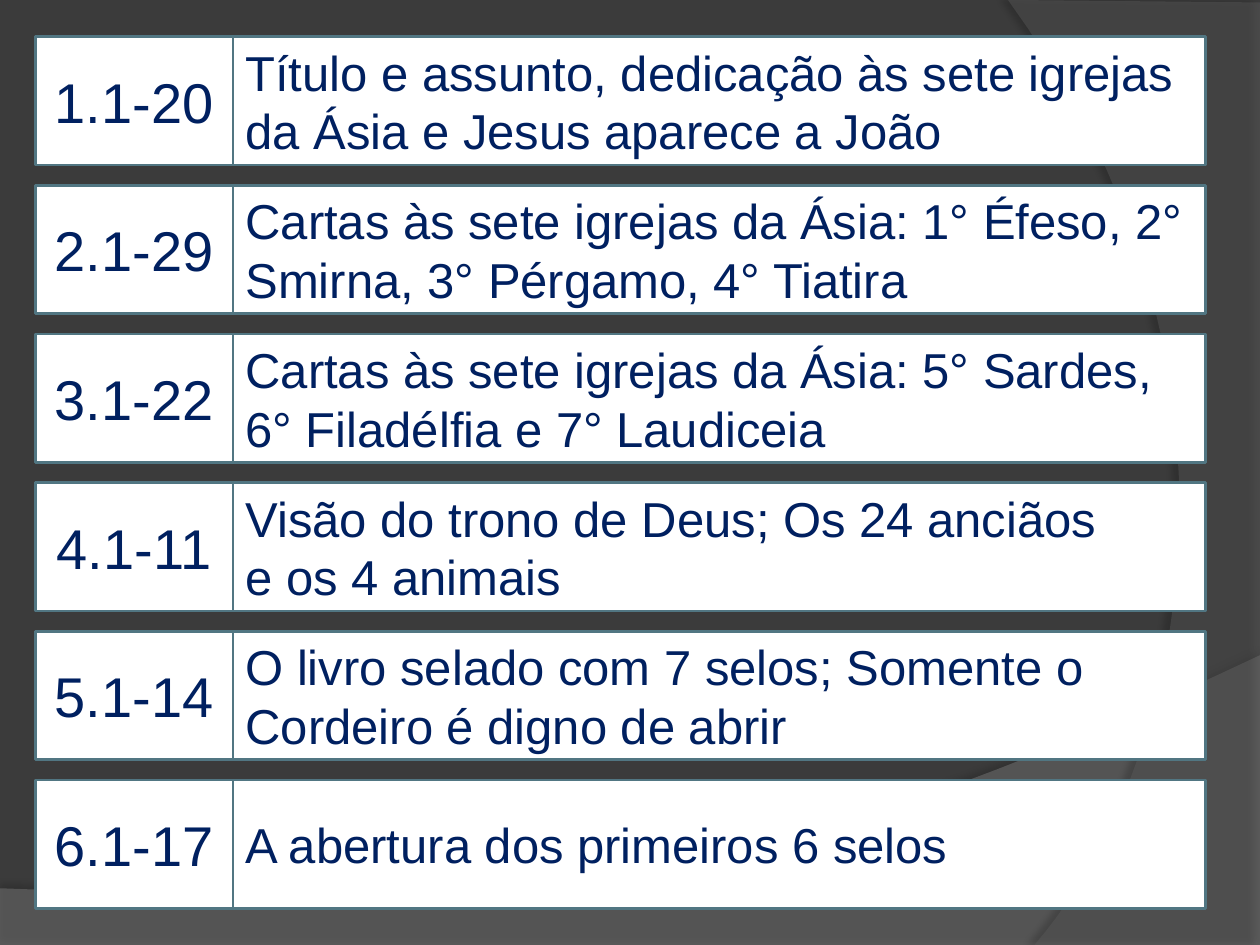
"""Build a slide listing the first six chapters of Revelation."""
from lxml import etree
from pptx import Presentation
from pptx import util as u
from pptx.dml.color import RGBColor
from pptx.enum import shapes, text
from pptx.oxml import ns

DARK = RGBColor(0x3B, 0x3B, 0x3B)
GREY = RGBColor(0x7F, 0x7F, 0x7F)
ASH = RGBColor(0x5E, 0x5E, 0x5E)
WHITE = RGBColor(0xFF, 0xFF, 0xFF)
TEAL = RGBColor(0x51, 0x76, 0x82)
NAVY = RGBColor(0x00, 0x20, 0x60)
BLACK = RGBColor(0x00, 0x00, 0x00)

ROWS = [
    ("1.1-20", "Título e assunto, dedicação às sete igrejas\nda Ásia e Jesus aparece a João"),
    ("2.1-29", "Cartas às sete igrejas da Ásia: 1° Éfeso, 2° Smirna, 3° Pérgamo, 4° Tiatira"),
    ("3.1-22", "Cartas às sete igrejas da Ásia: 5° Sardes, 6° Filadélfia e 7° Laudiceia"),
    ("4.1-11", "Visão do trono de Deus; Os 24 anciãos\ne os 4 animais"),
    ("5.1-14", "O livro selado com 7 selos; Somente o Cordeiro é digno de abrir"),
    ("6.1-17", "A abertura dos primeiros 6 selos"),
]
LEFT, TOP, STEP, HIGH = 0.28, 0.29, 1.18, 1.02
KEY, WIDE = 1.57, 7.72


def curve(a, b, c, d, n=40):
    """Return n points along a cubic curve, after its start."""
    pts = []
    for i in range(1, n + 1):
        t = i / n
        s = 1 - t
        pts.append(tuple(s**3 * p + 3 * s * s * t * q + 3 * s * t * t * r + t**3 * e
                         for p, q, r, e in zip(a, b, c, d)))
    return pts


def add(node, tag, **attrs):
    """Append a drawing element with the given attributes."""
    return etree.SubElement(node, ns.qn(tag), {k: str(v) for k, v in attrs.items()})


def wave(slide, pts, fill, alpha, shade, dist, angle):
    """Draw a translucent curved panel with a soft shadow."""
    pts = [(u.Inches(x), u.Inches(y)) for x, y in pts]
    form = slide.shapes.build_freeform(*pts[0], scale=1.0)
    form.add_line_segments(pts[1:], close=True)
    shape = form.convert_to_shape()
    shape.fill.solid()
    shape.fill.fore_color.rgb = fill
    shape.line.fill.background()
    shape.shadow.inherit = False
    props = shape.element.spPr
    add(props.find(".//" + ns.qn("a:srgbClr")), "a:alpha", val=alpha * 1000)
    glow = add(props.find(ns.qn("a:effectLst")), "a:outerShdw", blurRad=u.Pt(4),
               dist=u.Pt(dist), dir=angle * 60000, algn="ctr", rotWithShape=0)
    add(add(glow, "a:srgbClr", val=BLACK), "a:alpha", val=shade * 1000)


def box(slide, left, top, width, words, size, align):
    """Draw a white bordered box of navy text."""
    shape = slide.shapes.add_shape(shapes.MSO_SHAPE.RECTANGLE, u.Inches(left), u.Inches(top),
                                   u.Inches(width), u.Inches(HIGH))
    shape.shadow.inherit = False
    shape.fill.solid()
    shape.fill.fore_color.rgb = WHITE
    shape.line.color.rgb = TEAL
    shape.line.width = u.Pt(1.5)
    frame = shape.text_frame
    frame.word_wrap = True
    frame.vertical_anchor = text.MSO_ANCHOR.MIDDLE
    frame.text = words
    for para in frame.paragraphs:
        para.alignment = align
        para.font.name = "Arial"
        para.font.size = u.Pt(size)
        para.font.color.rgb = NAVY


def main():
    """Build and save the slide."""
    prs = Presentation()
    prs.slide_width, prs.slide_height = u.Inches(10), u.Inches(7.5)
    slide = prs.slides.add_slide(prs.slide_layouts[6])
    back = slide.background.fill
    back.solid()
    back.fore_color.rgb = DARK
    low = curve((10, 5.2), (5.59, 7.29), (3.91, 7.19), (0, 7.05))
    wave(slide, [(0, 7.05), (0, 7.51), (10, 7.51), (10, 5.2)] + low[:-1], GREY, 45, 35, 3.5, 270)
    side = curve((8.21, 7.5), (9.35, 6.19), (10.18, 3), (8, 0))
    wave(slide, [(10, 0.02), (10, 7.5), (8.21, 7.5)] + side, ASH, 40, 45, 4, 180)
    tops = [TOP + i * STEP for i in range(len(ROWS))]
    for top, (_, topic) in zip(tops, ROWS):
        box(slide, LEFT + KEY, top, WIDE, topic, 28, text.PP_ALIGN.LEFT)
    for top, (verse, _) in zip(tops, ROWS):
        box(slide, LEFT, top, KEY, verse, 32, text.PP_ALIGN.CENTER)
    prs.save("out.pptx")


if __name__ == "__main__":
    main()
